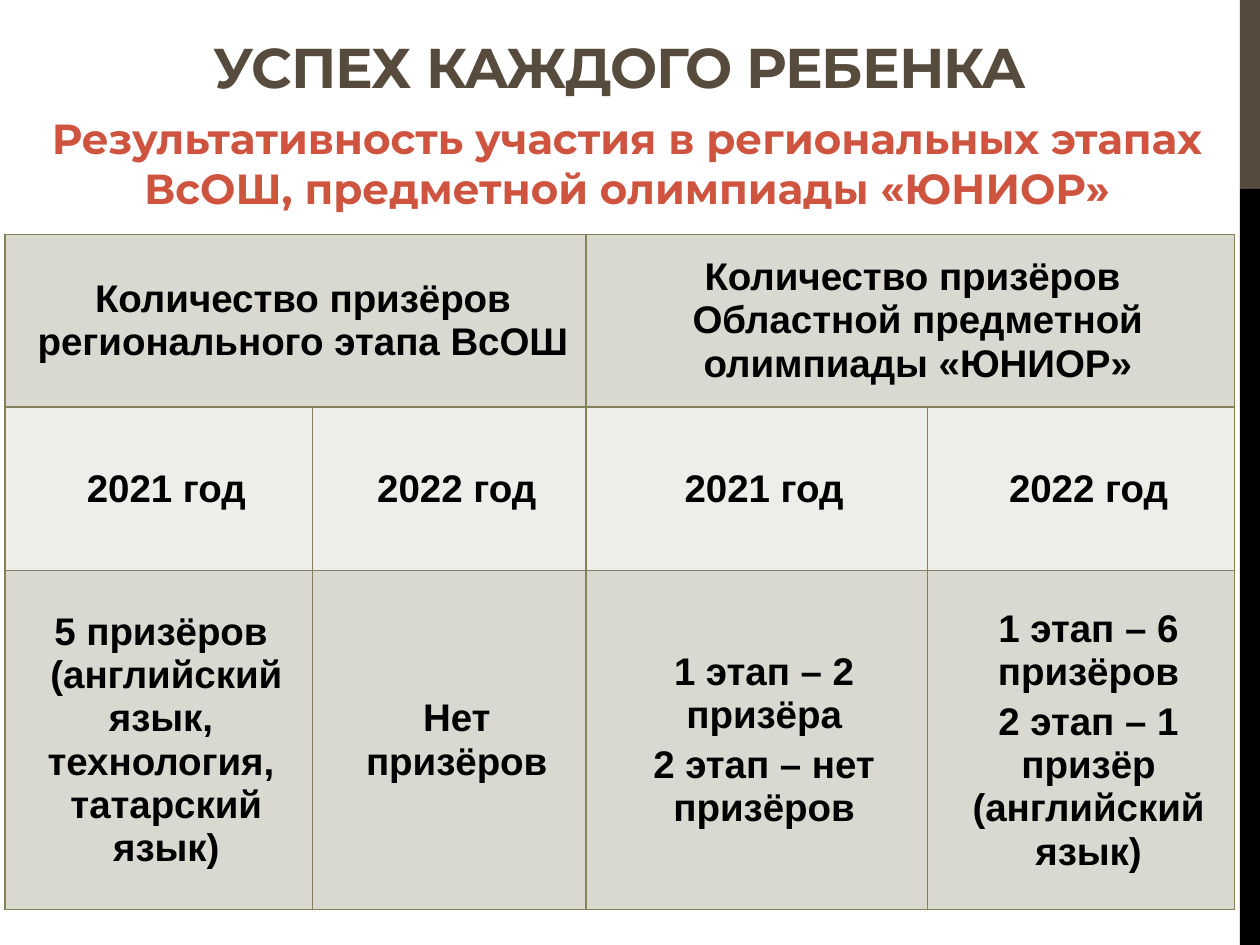
from lxml import etree
from pptx import Presentation
from pptx import util as u
from pptx.dml.color import RGBColor
from pptx.enum import shapes, text
from pptx.oxml import ns

INK = {"brown": "564B3C", "black": "000000", "red": "CF543F",
       "dark": "D9D8D1", "light": "EDEDEA", "edge": "848058"}
COLS = [2.44, 2.17, 2.71, 2.44]
ROWS = [1.37, 1.3, 2.69]
HEADS = ["Количество призёров регионального этапа ВсОШ",
         "Количество призёров \nОбластной предметной олимпиады «ЮНИОР»"]
YEARS = ["2021 год", "2022 год"]
WINS = [["5 призёров \n(английский язык, \nтехнология, \nтатарский язык)"],
        ["Нет призёров"],
        ["1 этап – 2 призёра", "2 этап – нет призёров"],
        ["1 этап – 6 призёров", "2 этап – 1 призёр (английский язык)"]]


def tint(name):
    return RGBColor.from_string(INK[name])


def inch(box):
    return [u.Inches(n) for n in box]


def write(para, words, size, face, ink):
    para.alignment = text.PP_ALIGN.CENTER
    for i, line in enumerate(words.split("\n")):
        if i:
            para.add_line_break()
        run = para.add_run()
        run.text = line
        run.font.size = u.Pt(size)
        run.font.name = face
        run.font.bold = True
        run.font.color.rgb = tint(ink)


def add_bar(slide, box, ink):
    bar = slide.shapes.add_shape(shapes.MSO_SHAPE.RECTANGLE, *inch(box))
    bar.shadow.inherit = False
    bar.fill.solid()
    bar.fill.fore_color.rgb = tint(ink)
    bar.line.fill.background()


def add_title(slide, box):
    title = slide.shapes.title
    title.left, title.top, title.width, title.height = inch(box)
    frame = title.text_frame
    frame.word_wrap = True
    frame.auto_size = text.MSO_AUTO_SIZE.NONE
    frame.vertical_anchor = text.MSO_ANCHOR.BOTTOM
    para = frame.paragraphs[0]
    write(para, "УСПЕХ КАЖДОГО РЕБЕНКА", 32, "Montserrat", "brown")
    para.runs[0].font._element.set("spc", "-60")


def add_lead(slide, box):
    frame = slide.shapes.add_textbox(*inch(box)).text_frame
    frame.word_wrap = True
    para = frame.paragraphs[0]
    para.space_after = u.Pt(6)
    write(para, "Результативность участия в региональных этапах ВсОШ, "
          "предметной олимпиады «ЮНИОР»", 24, "Montserrat", "red")


def edge_cell(cell):
    props = cell._tc.get_or_add_tcPr()
    for i, side in enumerate(("lnL", "lnR", "lnT", "lnB")):
        line = etree.Element(ns.qn("a:" + side), w=str(u.Pt(1)))
        fill = etree.SubElement(line, ns.qn("a:solidFill"))
        etree.SubElement(fill, ns.qn("a:srgbClr"), val=INK["edge"])
        props.insert(i, line)


def fill_cell(cell, paras):
    cell.vertical_anchor = text.MSO_ANCHOR.MIDDLE
    frame = cell.text_frame
    for i, words in enumerate(paras):
        para = frame.add_paragraph() if i else frame.paragraphs[0]
        para.space_before = u.Pt(4.4)
        para._p.get_or_add_pPr().set("marL", str(u.Inches(0.12)))
        write(para, words, 22, "Arial", "black")


def add_grid(slide, box):
    grid = slide.shapes.add_table(len(ROWS), len(COLS), *inch(box)).table
    for col, wide in zip(grid.columns, COLS):
        col.width = u.Inches(wide)
    for r, (row, high) in enumerate(zip(grid.rows, ROWS)):
        row.height = u.Inches(high)
        for cell in row.cells:
            cell.fill.solid()
            cell.fill.fore_color.rgb = tint("light" if r == 1 else "dark")
            edge_cell(cell)
    for i, head in enumerate(HEADS):
        cell = grid.cell(0, 2 * i)
        cell.merge(grid.cell(0, 2 * i + 1))
        fill_cell(cell, [head])
    for c, wins in enumerate(WINS):
        fill_cell(grid.cell(1, c), [YEARS[c % 2]])
        fill_cell(grid.cell(2, c), wins)


def main():
    deck = Presentation()
    deck.slide_width, deck.slide_height = inch((10, 7.5))
    slide = deck.slides.add_slide(deck.slide_layouts[5])
    add_bar(slide, (9.84, 0, 0.16, 1.5), "brown")
    add_bar(slide, (9.84, 1.5, 0.16, 6), "black")
    add_lead(slide, (0.17, 0.84, 9.61, 0.87))
    add_grid(slide, (0.04, 1.86, sum(COLS), sum(ROWS)))
    add_title(slide, (0.04, 0.05, 9.76, 0.79))
    deck.save("out.pptx")


if __name__ == "__main__":
    main()
